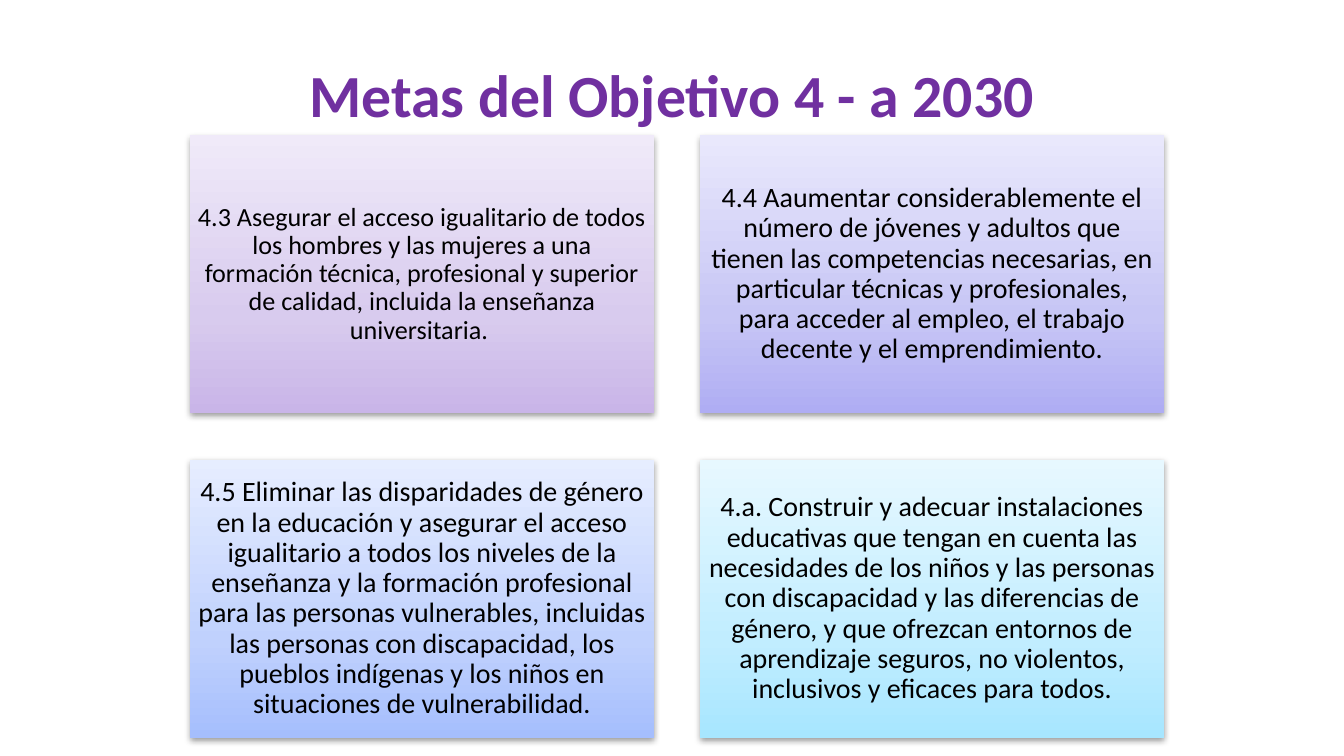
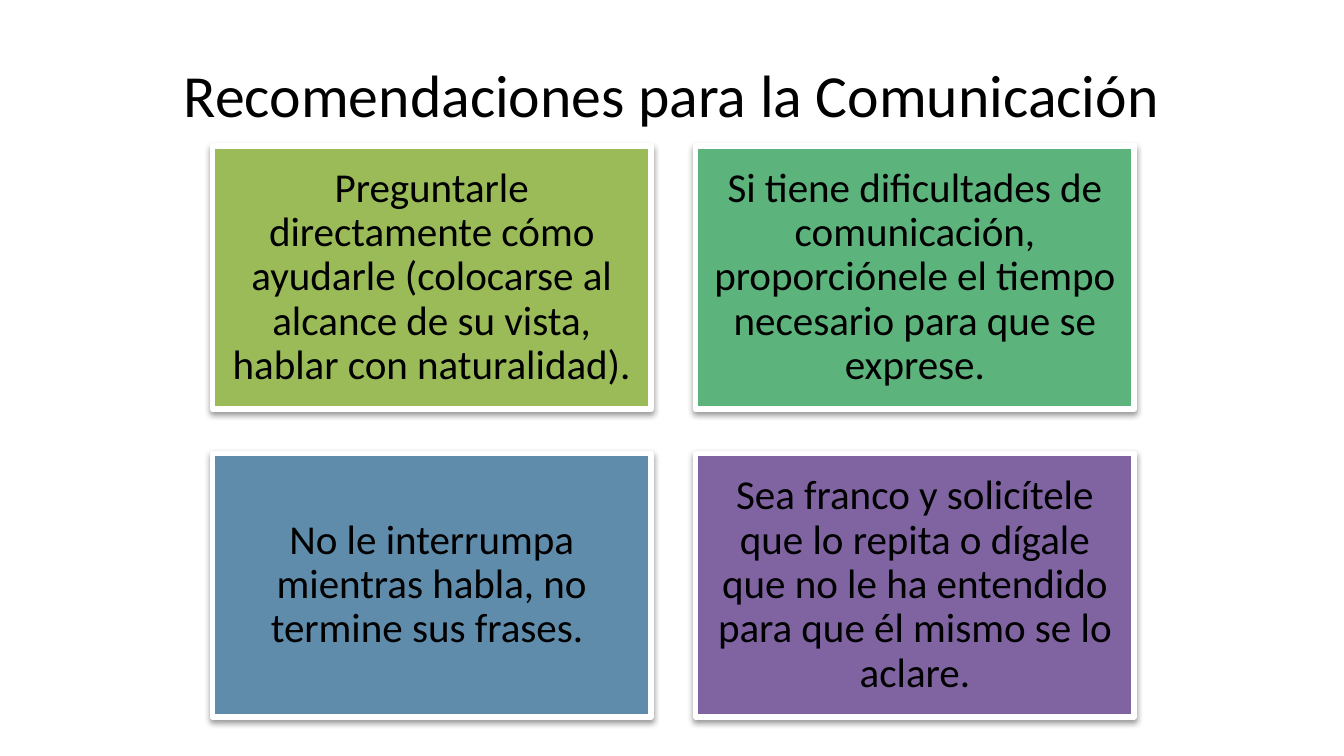
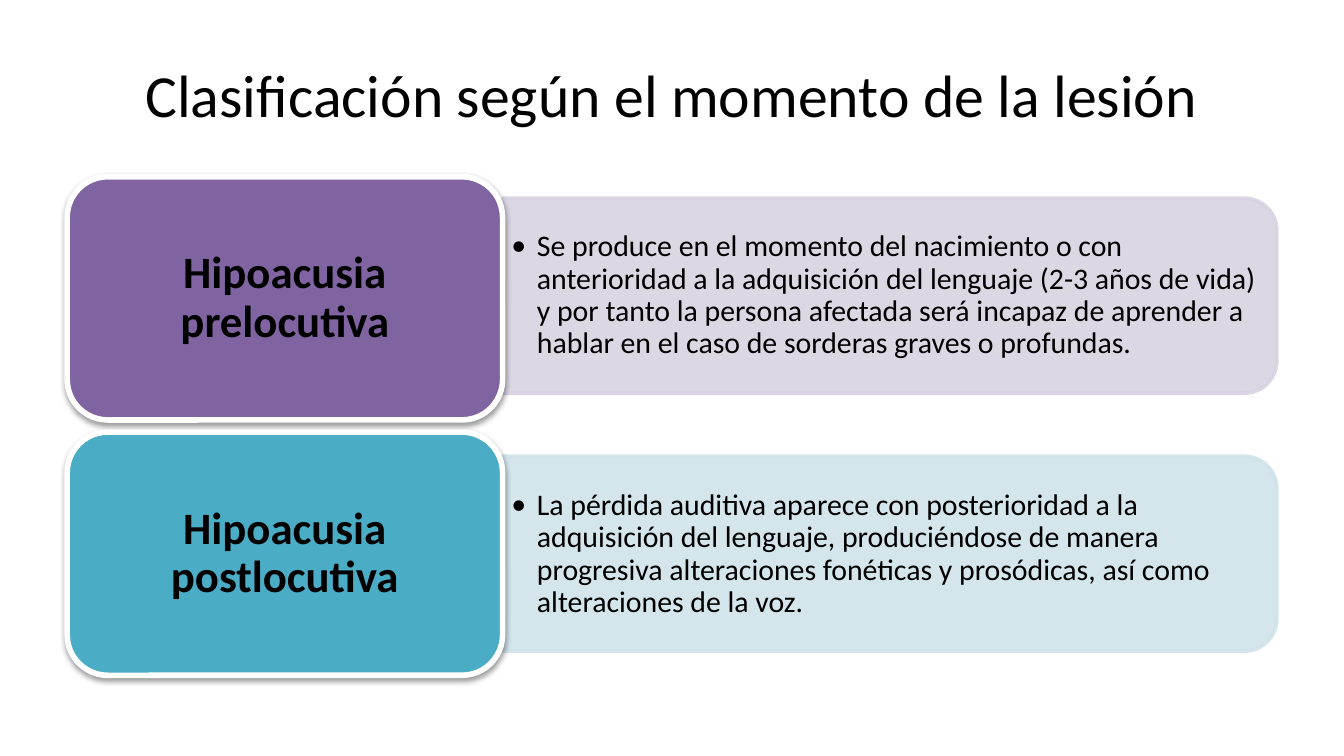
from copy import deepcopy

from lxml import etree
from pptx import Presentation
from pptx.dml.color import RGBColor
from pptx.enum.shapes import MSO_SHAPE
from pptx.enum.text import MSO_ANCHOR, PP_ALIGN
from pptx.oxml import parse_xml
from pptx.oxml.ns import nsdecls, qn
from pptx.util import Pt

RECT = MSO_SHAPE.RECTANGLE
ROUNDED = MSO_SHAPE.ROUNDED_RECTANGLE
TWO_ROUNDED = MSO_SHAPE.ROUND_2_SAME_RECTANGLE
MIDDLE = MSO_ANCHOR.MIDDLE
CENTER, LEFT = PP_ALIGN.CENTER, PP_ALIGN.LEFT

PX = 4572  # EMU per px, 200 px to the inch
FONT = "Calibri"
BLACK, WHITE, PURPLE = "000000", "FFFFFF", "7030A0"
SHADOW = (
    f'<a:effectLst {nsdecls("a")}>'
    '<a:outerShdw blurRad="40000" dist="20000" dir="5400000" rotWithShape="0">'
    '<a:srgbClr val="000000"><a:alpha val="38000"/></a:srgbClr>'
    "</a:outerShdw></a:effectLst>"
)


def write(shape, text, size=15, color=BLACK, bold=False, align=CENTER,
          spacing=0.9, margins=(20, 10)):
    """Fill a shape with one paragraph, centred vertically."""
    frame = shape.text_frame
    frame.word_wrap = True
    frame.vertical_anchor = MIDDLE
    frame.margin_left = frame.margin_right = margins[0] * PX
    frame.margin_top = frame.margin_bottom = margins[1] * PX
    paragraph = frame.paragraphs[0]
    paragraph.alignment = align
    paragraph.line_spacing = spacing
    run = paragraph.add_run()
    run.text = text
    run.font.name = FONT
    run.font.size = Pt(size)
    run.font.bold = bold
    run.font.color.rgb = RGBColor.from_string(color)
    return paragraph


def add_block(slide, kind, box, fill=None, line=None, line_width=3, shadow=True):
    """Add a preset shape with a plain fill, an outline and a soft shadow."""
    block = slide.shapes.add_shape(kind, *[v * PX for v in box])
    block.shadow.inherit = False
    if fill:
        block.fill.solid()
        block.fill.fore_color.rgb = RGBColor.from_string(fill)
    if line:
        block.line.color.rgb = RGBColor.from_string(line)
        block.line.width = Pt(line_width)
    else:
        block.line.fill.background()
    if shadow:
        properties = block.element.spPr
        properties.replace(properties.find(qn("a:effectLst")), parse_xml(SHADOW))
    return block


prs = Presentation()
prs.slide_width, prs.slide_height = 2000 * PX, 1125 * PX

# Slides and their titles
titles = [
    ("Metas del Objetivo 4 - a 2030", PURPLE, True),
    ("Recomendaciones para la Comunicación", BLACK, False),
    ("Clasificación según el momento de la lesión", BLACK, False),
]
slides = []
for title, color, bold in titles:
    slide = prs.slides.add_slide(prs.slide_layouts[6])
    heading = slide.shapes.add_textbox(100 * PX, 46 * PX, 1800 * PX, 188 * PX)
    write(heading, title, size=32, color=color, bold=bold, spacing=1)
    slides.append(slide)
goals_slide, advice_slide, types_slide = slides

# Slide 1: goals in a two by two grid, shaded from bottom to top
goals = [
    ("4.3 Asegurar el acceso igualitario de todos los hombres y las mujeres a una "
     "formación técnica, profesional y superior de calidad, incluida la enseñanza "
     "universitaria. ", 14, ("C9B5E8", "D8CBEE", "F0EAF9")),
    ("4.4 Aaumentar considerablemente el número de jóvenes y adultos que tienen las "
     "competencias necesarias, en particular técnicas y profesionales, para acceder "
     "al empleo, el trabajo decente y el emprendimiento.", 15,
     ("AFADF3", "C7C6F5", "E9E8FC")),
    ("4.5 Eliminar las disparidades de género en la educación y asegurar el acceso "
     "igualitario a todos los niveles de la enseñanza y la formación profesional para "
     "las personas vulnerables, incluidas las personas con discapacidad, los pueblos "
     "indígenas y los niños en situaciones de vulnerabilidad.", 15,
     ("A5BEFD", "C0D1FD", "E6EDFF")),
    ("4.a. Construir y adecuar instalaciones educativas que tengan en cuenta las "
     "necesidades de los niños y las personas con discapacidad y las diferencias de "
     "género, y que ofrezcan entornos de aprendizaje seguros, no violentos, "
     "inclusivos y eficaces para todos.", 15, ("A7E6FF", "C1EDFF", "E7F8FF")),
]
for i, (goal, size, shades) in enumerate(goals):
    row, column = divmod(i, 2)
    card = add_block(goals_slide, RECT,
                     (283 + 759 * column, 201 + 483 * row, 690, 414))
    card.fill.gradient()
    card.fill.gradient_angle = 90
    stop_list = card.element.spPr.find(".//" + qn("a:gsLst"))
    stop_list.insert(1, deepcopy(stop_list[0]))
    for stop, position, shade in zip(card.fill.gradient_stops, (0, 0.35, 1), shades):
        stop.position = position
        stop.color.rgb = RGBColor.from_string(shade)
    write(card, goal, size=size, margins=(11, 11))

# Slide 2: advice in a two by two grid
advice = [
    ("Preguntarle directamente cómo ayudarle (colocarse al alcance de su vista, "
     "hablar con naturalidad).", "9BBB59"),
    ("Si tiene dificultades de comunicación, proporciónele el tiempo necesario para "
     "que se exprese.", "5CB37C"),
    ("No le interrumpa mientras habla, no termine sus frases. ", "608CAB"),
    ("Sea franco y solicítele que lo repita o dígale que no le ha entendido para que "
     "él mismo se lo aclare.", "8064A2"),
]
for i, (tip, color) in enumerate(advice):
    row, column = divmod(i, 2)
    card = add_block(advice_slide, RECT,
                     (316 + 719 * column, 217 + 458 * row, 653, 392), color, WHITE)
    write(card, tip, size=22, margins=(18, 18))

# Slide 3: each type of hearing loss with its description
hearing_losses = [
    ("Hipoacusia prelocutiva", "8064A2", "D8D3E0",
     "Se produce en el momento del nacimiento o con anterioridad a la adquisición del "
     "lenguaje (2-3 años de vida) y por tanto la persona afectada será incapaz de "
     "aprender a hablar en el caso de sorderas graves o profundas."),
    ("Hipoacusia postlocutiva", "4BACC6", "D0E3EA",
     "La pérdida auditiva aparece con posterioridad a la adquisición del lenguaje, "
     "produciéndose de manera progresiva alteraciones fonéticas y prosódicas, así "
     "como alteraciones de la voz."),
]
for row, (name, color, tint, description) in enumerate(hearing_losses):
    # Translucent panel, turned so that its round corners face right
    panel = add_block(types_slide, TWO_ROUNDED, (1179, -136 + 384 * row, 290, 1152),
                      tint, tint, line_width=2, shadow=False)
    panel.rotation = 90
    for tone in panel.element.spPr.iter(qn("a:srgbClr")):
        etree.SubElement(tone, qn("a:alpha"), val="90000")

    # Bulleted description
    detail = types_slide.shapes.add_textbox(
        748 * PX, (309 + 385 * row) * PX, 1138 * PX, 262 * PX)
    paragraph = write(detail, description, size=16, align=LEFT, margins=(13, 6))
    paragraph.level = 1
    bullet_format = paragraph._p.get_or_add_pPr()
    bullet_format.set("marL", str(38 * PX))
    bullet_format.set("indent", str(-38 * PX))
    etree.SubElement(bullet_format, qn("a:buFont"), typeface=FONT)
    etree.SubElement(bullet_format, qn("a:buChar"), char="•")

    # Name of the type
    label = add_block(types_slide, ROUNDED, (100, 263 + 380 * row, 648, 362),
                      color, WHITE)
    write(label, name, size=24, bold=True)

prs.save("out.pptx")
